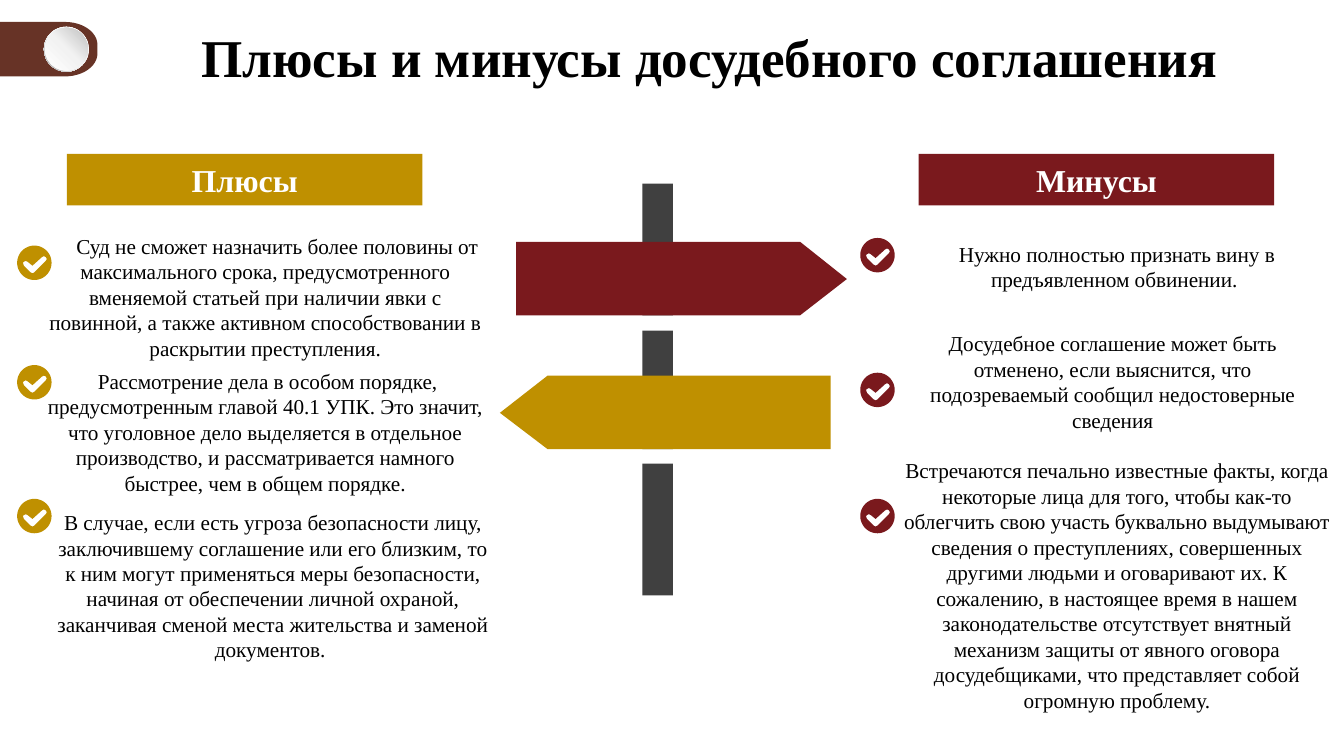
from copy import deepcopy
from math import cos, pi, sin

from pptx import Presentation
from pptx.dml.color import RGBColor
from pptx.enum.shapes import MSO_SHAPE
from pptx.enum.text import MSO_ANCHOR, MSO_AUTO_SIZE, PP_ALIGN
from pptx.oxml.ns import qn
from pptx.util import Inches, Pt

CENTER = PP_ALIGN.CENTER
TOP = MSO_ANCHOR.TOP
NO_FIT = MSO_AUTO_SIZE.NONE
RECTANGLE, OVAL, DONUT = MSO_SHAPE.RECTANGLE, MSO_SHAPE.OVAL, MSO_SHAPE.DONUT

BLACK = RGBColor(0x00, 0x00, 0x00)
WHITE = RGBColor(0xFF, 0xFF, 0xFF)
PALE = RGBColor(0xF2, 0xF2, 0xF2)
SILVER = RGBColor(0xBF, 0xBF, 0xBF)
STEEL = RGBColor(0xA6, 0xA6, 0xA6)
BROWN = RGBColor(0x67, 0x33, 0x26)
CHARCOAL = RGBColor(0x40, 0x40, 0x40)
GOLD = RGBColor(0xBF, 0x90, 0x00)
MAROON = RGBColor(0x7A, 0x19, 0x1D)

deck = Presentation()
deck.slide_width, deck.slide_height = Inches(14.06), Inches(7.91)
page = deck.slides.add_slide(deck.slide_layouts[5])


def draw_outline(contours, color):
    """Fill one shape made of closed contours; inner contours become holes."""
    builder = None
    for contour in contours:
        points = [(Inches(x), Inches(y)) for x, y in contour]
        if builder is None:
            builder = page.shapes.build_freeform(*points[0])
        else:
            builder.move_to(*points[0])
        builder.add_line_segments(points[1:], close=True)
    shape = builder.convert_to_shape()
    shape.shadow.inherit = False
    shape.fill.solid()
    shape.fill.fore_color.rgb = color
    shape.line.fill.background()


def write_text(shape, text, size, color, bold=False):
    """Put centred text into a shape."""
    frame = shape.text_frame
    frame.text = text
    frame.word_wrap = True
    frame.auto_size = NO_FIT
    frame.vertical_anchor = TOP
    para = frame.paragraphs[0]
    para.alignment = CENTER
    font = para.runs[0].font
    font.name, font.size, font.bold = "Times New Roman", Pt(size), bold
    font.color.rgb = color
    return para


# Toggle in the corner: a tab with rounded right corners
arc = [i * pi / 24 for i in range(13)]
upper = [(0.68 + 0.34 * sin(a), 0.47 - 0.24 * cos(a)) for a in arc]
lower = [(0.68 + 0.34 * cos(a), 0.56 + 0.24 * sin(a)) for a in arc]
draw_outline([[(-0.02, 0.23), *upper, *lower, (-0.02, 0.8)]], BROWN)

# Toggle knob: a shaded ring around a shaded disc
for kind, left, top, size, angle, stops in (
    (DONUT, 0.46, 0.28, 0.47, 225, ((0, WHITE), (0.55, PALE), (1, STEEL))),
    (OVAL, 0.47, 0.29, 0.45, 45, ((0, WHITE), (0.51, PALE), (1, SILVER))),
):
    knob = page.shapes.add_shape(
        kind, Inches(left), Inches(top), Inches(size), Inches(size))
    knob.shadow.inherit = False
    knob.line.fill.background()
    if kind == DONUT:
        knob.adjustments[0] = 0.05
    knob.fill.gradient()
    knob.fill.gradient_angle = angle
    stop_list = next(knob.element.iter(qn("a:gsLst")))
    stop_list.append(deepcopy(stop_list[0]))
    for stop, (position, color) in zip(knob.fill.gradient_stops, stops):
        stop.position = position
        stop.color.rgb = color

# Title
title = page.shapes.title
title.left, title.top = Inches(1.09), Inches(0.21)
title.width, title.height = Inches(12.66), Inches(0.77)
write_text(title, "Плюсы и минусы досудебного соглашения", 40, BLACK, True)

# Signpost pole and column headings
for left, top, width, height, color, heading in (
    (6.72, 1.92, 0.32, 1.38, CHARCOAL, None),
    (6.72, 3.46, 0.32, 1.24, CHARCOAL, None),
    (6.72, 4.85, 0.32, 1.38, CHARCOAL, None),
    (0.7, 1.61, 3.72, 0.54, GOLD, "Плюсы"),
    (9.61, 1.61, 3.72, 0.54, MAROON, "Минусы"),
):
    block = page.shapes.add_shape(
        RECTANGLE, Inches(left), Inches(top), Inches(width), Inches(height))
    block.shadow.inherit = False
    block.fill.solid()
    block.fill.fore_color.rgb = color
    block.line.fill.background()
    if heading:
        write_text(block, heading, 24, color=WHITE, bold=True)
        block.text_frame.margin_top = block.text_frame.margin_bottom = Inches(0.07)

# Signpost arrows: tip, shoulder and flat end
for tip, shoulder, end, top, color in (
    (5.23, 5.73, 8.69, 3.93, GOLD),
    (8.86, 8.37, 5.4, 2.53, MAROON),
):
    bottom = top + 0.77
    draw_outline([[(tip, top + 0.39), (shoulder, top), (end, top),
                   (end, bottom), (shoulder, bottom)]], color)

# Check badges: a disc with the tick cut out
DISC = [(0.18 * cos(i * pi / 24), 0.18 * sin(i * pi / 24)) for i in range(48)]
TICK = [(0.12, -0.02), (0, 0.1), (-0.02, 0.11), (-0.04, 0.1), (-0.11, 0.03),
        (-0.12, 0), (-0.11, -0.01), (-0.09, -0.02), (-0.07, -0.01),
        (-0.02, 0.03), (0.08, -0.06), (0.1, -0.07), (0.12, -0.06), (0.13, -0.04)]
for center_x, color, centers_y in (
    (0.36, GOLD, (2.75, 4, 5.4)),
    (9.18, MAROON, (2.67, 4.08, 5.4)),
):
    for center_y in centers_y:
        draw_outline([[(center_x + x, center_y + y) for x, y in contour]
                      for contour in (DISC, TICK)], color)

# Arguments for and against; the last number is the first-line indent
for left, top, width, height, text, indent in (
    (0.39, 2.39, 4.77, 1.45,
     "Суд не сможет назначить более половины от максимального срока, "
     "предусмотренного вменяемой статьей при наличии явки с повинной, а также "
     "активном способствовании в раскрытии преступления.", 0.25),
    (0.39, 3.8, 4.77, 1.45,
     "Рассмотрение дела в особом порядке, предусмотренным главой 40.1 УПК. Это "
     "значит, что уголовное дело выделяется в отдельное производство, и "
     "рассматривается намного быстрее, чем в общем порядке.", 0.05),
    (0.47, 5.28, 4.77, 2.06,
     "В случае, если есть угроза безопасности лицу, заключившему соглашение или "
     "его близким, то к ним могут применяться меры безопасности, начиная от "
     "обеспечении личной охраной, заканчивая сменой места жительства и заменой "
     "документов. ", 0),
    (9.3, 2.47, 4.77, 0.65,
     "Нужно полностью признать вину в предъявленном обвинении. ", 0),
    (9.45, 3.41, 4.38, 1.18,
     "Досудебное соглашение может быть отменено, если выяснится, что "
     "подозреваемый сообщил недостоверные сведения", 0),
    (9.3, 4.74, 4.77, 2.8,
     "Встречаются печально известные факты, когда некоторые лица для того, чтобы "
     "как-то облегчить свою участь буквально выдумывают сведения о преступлениях, "
     "совершенных другими людьми и оговаривают их. К сожалению, в настоящее время "
     "в нашем законодательстве отсутствует внятный механизм защиты от явного "
     "оговора досудебщиками, что представляет собой огромную проблему.", 0),
):
    box = page.shapes.add_textbox(
        Inches(left), Inches(top), Inches(width), Inches(height))
    para = write_text(box, text, 16, BLACK)
    box.text_frame.margin_left = box.text_frame.margin_right = Inches(0.11)
    if indent:
        para._p.get_or_add_pPr().set("indent", str(Inches(indent)))

deck.save("out.pptx")
